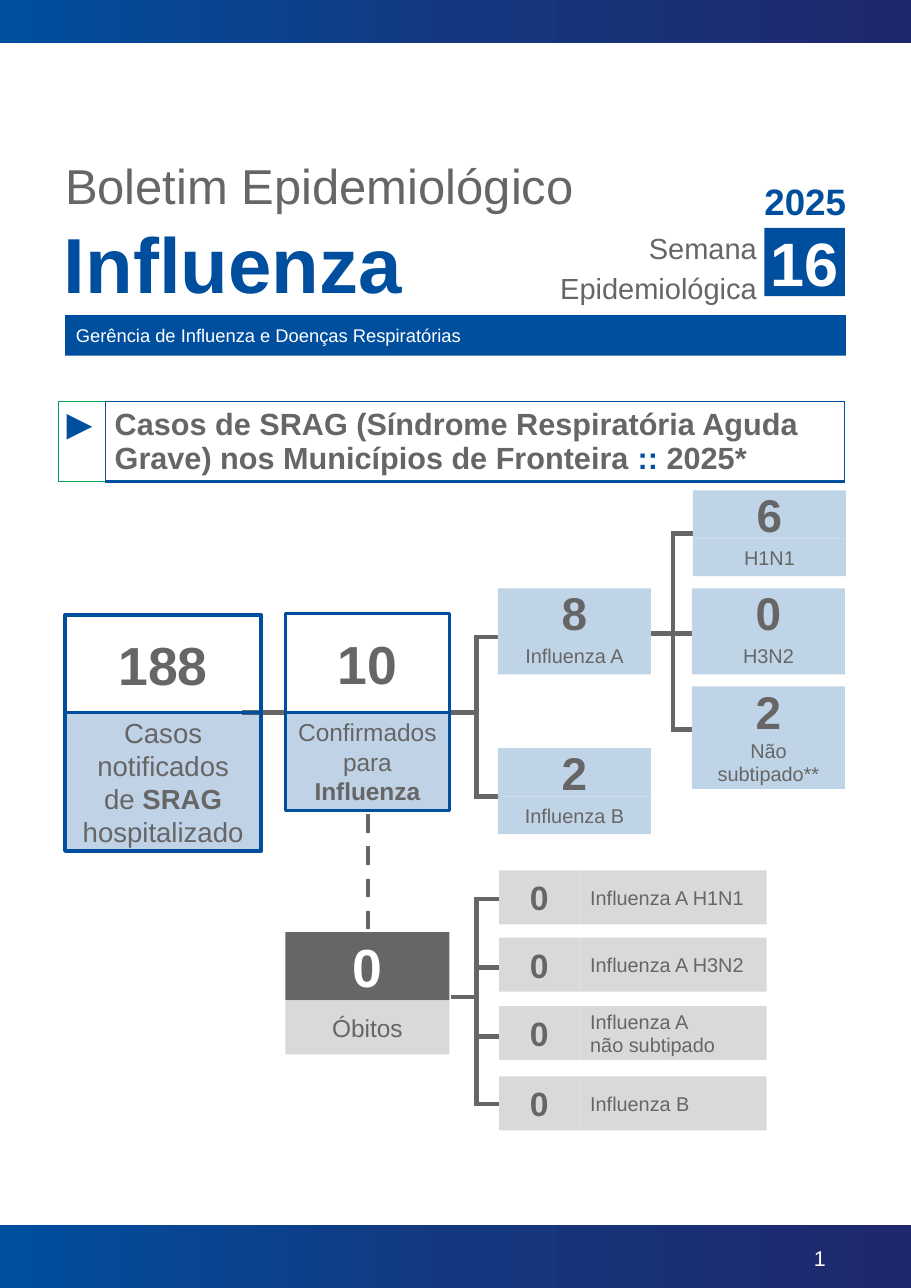
from copy import deepcopy
from lxml.etree import SubElement
from pptx import Presentation
from pptx.dml.color import RGBColor
from pptx.enum.dml import MSO_LINE
from pptx.enum.shapes import MSO_CONNECTOR, MSO_SHAPE
from pptx.enum.text import MSO_ANCHOR, PP_ALIGN
from pptx.oxml.ns import qn
from pptx.util import Pt

BLUE, GRAY, PALE, LIGHT, WHITE = "004F9F", "666666", "C0D4E7", "D9D9D9", "FFFFFF"
LEFT, MID, RIGHT = PP_ALIGN.LEFT, PP_ALIGN.CENTER, PP_ALIGN.RIGHT
rgb = RGBColor.from_string

deck = Presentation()
deck.slide_width, deck.slide_height = Pt(595.44), Pt(841.68)
slide = deck.slides.add_slide(deck.slide_layouts[6])
shapes = slide.shapes


def box(x, y, w, h, text="", size=13, color=GRAY, bold=False, fill=None,
        edge=None, align=MID, pad=(7.2, 7.2, 7.2, 7.2), anchor=MSO_ANCHOR.MIDDLE):
    """Add a rectangle, or a text box if it has no fill or edge; "_" toggles bold."""
    spot = Pt(x), Pt(y), Pt(w), Pt(h)
    if fill or edge:
        item = shapes.add_shape(MSO_SHAPE.RECTANGLE, *spot)
        item.shadow.inherit = False
        item.fill.background()
        item.line.fill.background()
    else:
        item = shapes.add_textbox(*spot)
    if fill:
        item.fill.solid()
        item.fill.fore_color.rgb = rgb(fill)
    if edge:
        item.line.color.rgb = rgb(edge)
        item.line.width = Pt(2.25)
    frame = item.text_frame
    frame.word_wrap = True
    frame.vertical_anchor = anchor
    (frame.margin_left, frame.margin_top,
     frame.margin_right, frame.margin_bottom) = map(Pt, pad)
    for row, words in enumerate(text.split("\n")):
        para = frame.add_paragraph() if row else frame.paragraphs[0]
        para.alignment = align
        for turn, part in enumerate(words.split("_")):
            if part:
                run = para.add_run()
                run.text = part
                run.font.name, run.font.size = "Arial", Pt(size)
                run.font.bold = bold != (turn % 2 == 1)
                run.font.color.rgb = rgb(color)
    return item


def link(x1, y1, x2, y2):
    line = shapes.add_connector(MSO_CONNECTOR.STRAIGHT, Pt(x1), Pt(y1), Pt(x2), Pt(y2))
    line.line.color.rgb = rgb(GRAY)
    line.line.width = Pt(3)
    SubElement(line._element.spPr, qn("a:effectLst"))
    return line


# Page bands
for top, high in ((0, 28.1), (800.6, 42.5)):
    band = box(0, top, 595.44, high, fill=BLUE)
    band.fill.gradient()
    band.fill.gradient_angle = 0
    first = band._element.xpath(".//a:gs")[0]
    first.addnext(deepcopy(first))
    for stop, (place, shade) in zip(band.fill.gradient_stops,
                                    ((0, BLUE), (0.5, "14387F"), (1, "20286D"))):
        stop.position, stop.color.rgb = place, rgb(shade)
box(524.9, 789.8, 36, 64, "1", 14, WHITE, align=LEFT)

# Heading
none = (0, 0, 0, 0)
box(42.5, 101.5, 394.6, 41, "Boletim Epidemiológico", 32, align=LEFT, pad=none,
    anchor=MSO_ANCHOR.TOP)
box(41.8, 141.1, 254.9, 52.6, "Influenza", 51, BLUE, True, align=LEFT, pad=none,
    anchor=MSO_ANCHOR.TOP)
week = box(350, 146.9, 151.8, 52.6, "Semana\nEpidemiológica", 19, align=RIGHT,
           pad=(0, 0, 7.2, 0), anchor=MSO_ANCHOR.TOP)
for para in week.text_frame.paragraphs:
    para.line_spacing = 1.15
box(491.8, 113.8, 69.1, 35.3, "2025", 24, BLUE, True)
box(499.7, 149, 52.6, 44.6, "16", 40, WHITE, True, BLUE, pad=none)
box(42.5, 205.9, 510.5, 26.6, "Gerência de Influenza e Doenças Respiratórias", 12,
    WHITE, fill=BLUE, align=LEFT, pad=(7.2, 0, 7.2, 0))

# Section title
table = shapes.add_table(1, 2, Pt(38.2), Pt(262.1), Pt(514.1), Pt(49)).table
table.first_row = table.horz_banding = False
table.columns[0].width, table.columns[1].width = Pt(31), Pt(483.1)
table.rows[0].height = Pt(49)
green = "00A859"
title = (
    (28, False, (0, 0), (("►", BLUE),),
     ((green, 0.75), (BLUE, 0.75), (green, 0.75), (green, 0.75))),
    (20, True, (5.8, 4.3),
     (("Casos de SRAG (Síndrome Respiratória Aguda Grave) nos Municípios de Fronteira ", GRAY),
      ("::", BLUE), (" 2025*", GRAY)),
     ((BLUE, 0.75), (BLUE, 0.75), (BLUE, 0.75), (BLUE, 2.25))),
)
for cell, (size, bold, pad, runs, edges) in zip(table.rows[0].cells, title):
    cell.fill.background()
    cell.margin_left, cell.margin_top = map(Pt, pad)
    cell.margin_right = cell.margin_bottom = 0
    for text, color in runs:
        run = cell.text_frame.paragraphs[0].add_run()
        run.text = text
        run.font.name, run.font.size, run.font.bold = "Arial", Pt(size), bold
        run.font.color.rgb = rgb(color)
    props = cell._tc.get_or_add_tcPr()
    for spot, (side, (color, width)) in enumerate(zip("LRTB", edges)):
        rule = SubElement(props, qn("a:ln" + side), w=str(Pt(width)))
        SubElement(SubElement(rule, qn("a:solidFill")), qn("a:srgbClr"), val=color)
        props.insert(spot, rule)

# Branches: trunk x, stem start, stem y, tip x, tip heights
for trunk, stem, level, tip, ends in (
    (311.4, 294.5, 465.8, 326.9, (416.2, 520.6)),
    (439.9, 422.6, 414, 455, (348.5, 414, 476.6)),
    (311.4, 294.5, 651.6, 326.9, (587.5, 632.2, 677.5, 721.4)),
):
    link(stem, level, trunk, level)
    link(trunk, ends[0] - 1.5, trunk, ends[-1] + 1.5)
    for end in ends:
        link(trunk, end, tip, end)
link(158.4, 465.8, 186.5, 465.8)
link(240.5, 532.1, 240.5, 610.6).line.dash_style = MSO_LINE.DASH

# Notified and confirmed cases
for x, y, w, count, label, size, high in (
    (42.5, 401.8, 128.2, "188", "Casos\nnotificados\nde _SRAG_\nhospitalizado", 18, 90.7),
    (186.5, 401, 107.3, "10", "Confirmados\npara _Influenza_", 16, 64.1),
):
    box(x, y, w, 465.5 - y, count, 35, bold=True, edge=BLUE)
    part = box(x, 465.5, w, high, label, size, fill=BLUE, edge=BLUE)
    tint = part._element.spPr.find(qn("a:solidFill"))[0]
    SubElement(tint, qn("a:alpha"), val="25000")

# Virus types
for x, y, count, label, high in (
    (452.9, 320.4, "6", "H1N1", 24.5),
    (452.2, 384.5, "0", "H3N2", 24.5),
    (452.2, 448.6, "2", "Não subtipado**", 35.3),
    (325.4, 384.5, "8", "Influenza A", 24.5),
    (325.4, 488.9, "2", "Influenza B", 24.5),
):
    box(x, y, 100.1, 31.7, count, 30, bold=True, fill=PALE)
    box(x, y + 31.7, 100.1, high, label, fill=PALE)

# Deaths
box(186.5, 609.1, 107.3, 44.6, "0", 35, WHITE, True, GRAY)
box(186.5, 653.8, 107.3, 35.3, "Óbitos", 16, fill=LIGHT)
for y, label in ((568.8, "Influenza A H1N1"), (612.7, "Influenza A H3N2"),
                 (657.4, "Influenza A\nnão subtipado"), (703.4, "Influenza B")):
    box(326.2, y, 52.5, 35.3, "0", 22, bold=True, fill=LIGHT)
    box(378.7, y, 122.4, 35.3, label, fill=LIGHT, align=LEFT)

deck.save("out.pptx")
